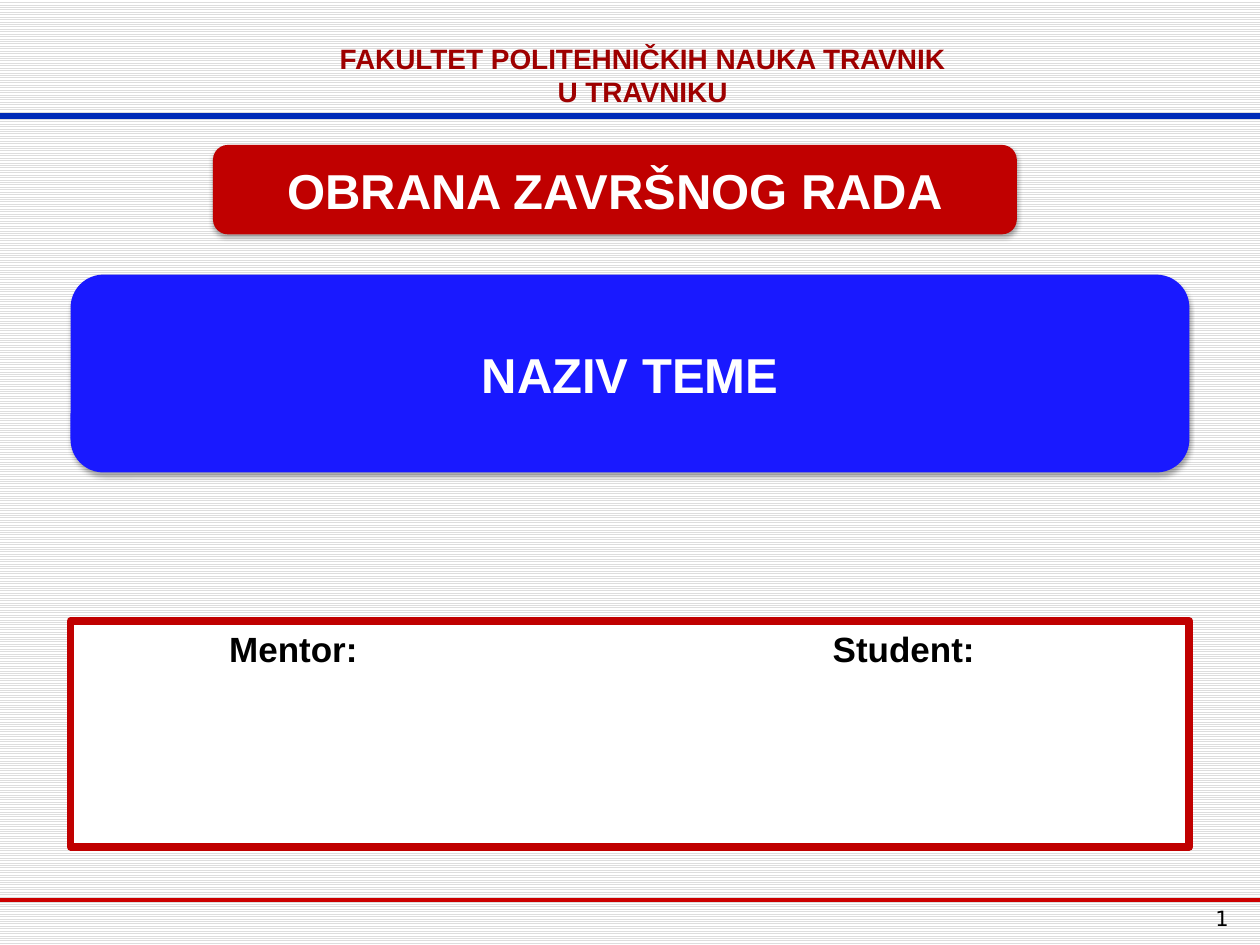
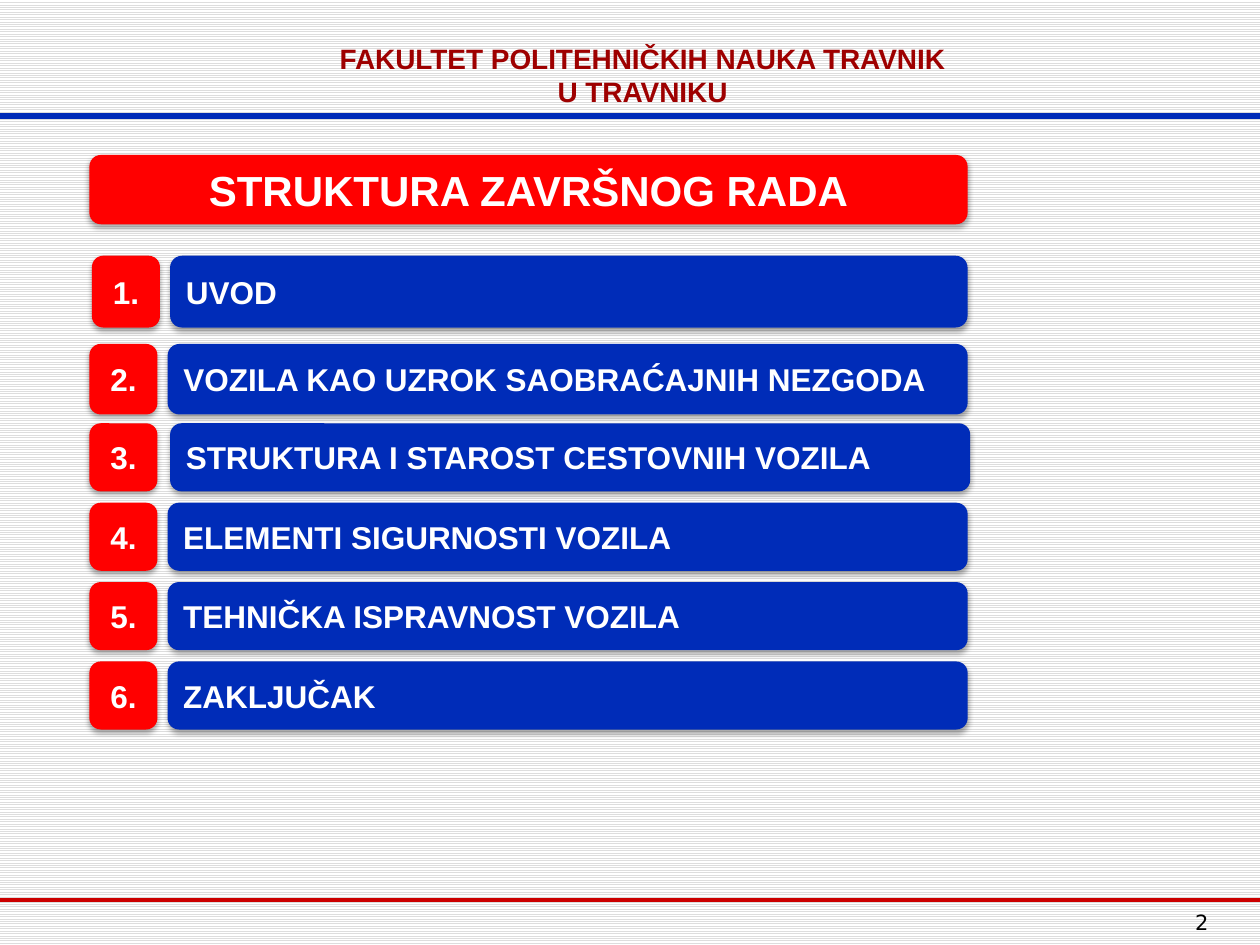
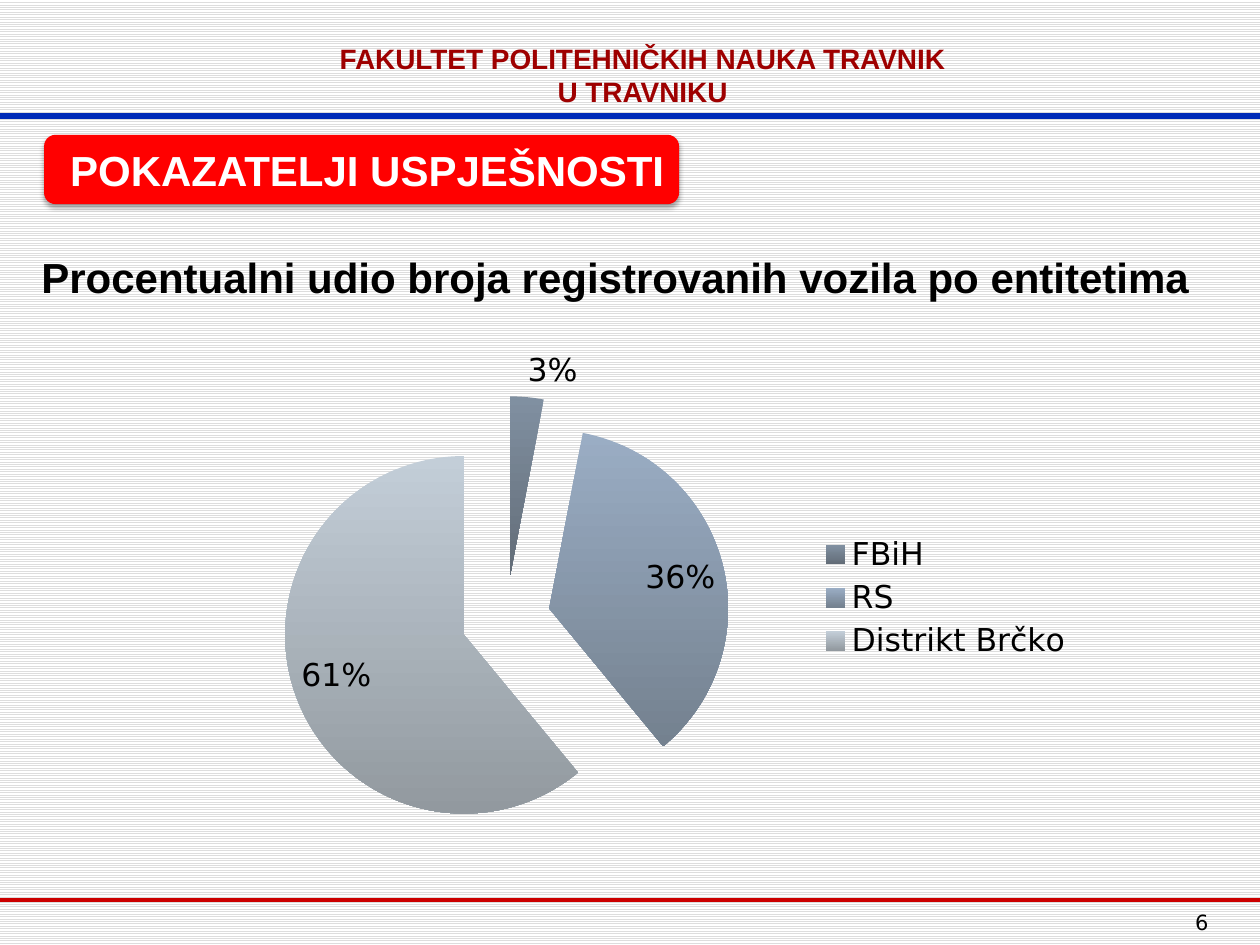
from lxml import etree
from pptx import Presentation
from pptx.chart.data import CategoryChartData
from pptx.dml.color import RGBColor
from pptx.enum.chart import XL_CHART_TYPE, XL_LABEL_POSITION, XL_LEGEND_POSITION
from pptx.enum.dml import MSO_PATTERN
from pptx.enum.shapes import MSO_CONNECTOR, MSO_SHAPE
from pptx.enum.text import MSO_ANCHOR, PP_ALIGN
from pptx.oxml.ns import qn
from pptx.util import Inches, Pt

PIE = XL_CHART_TYPE.PIE
BEST_FIT = XL_LABEL_POSITION.BEST_FIT
LEGEND_RIGHT = XL_LEGEND_POSITION.RIGHT
LIGHT_LINES = MSO_PATTERN.LIGHT_HORIZONTAL
STRAIGHT = MSO_CONNECTOR.STRAIGHT
PLATE = MSO_SHAPE.FLOWCHART_ALTERNATE_PROCESS
ROUNDED = MSO_SHAPE.ROUNDED_RECTANGLE
TOP, MIDDLE = MSO_ANCHOR.TOP, MSO_ANCHOR.MIDDLE
LEFT, CENTER, RIGHT = PP_ALIGN.LEFT, PP_ALIGN.CENTER, PP_ALIGN.RIGHT

FONT, NUMBER_FONT = "Arial", "DejaVu Sans"
BLACK, WHITE, STRIPE = "000000", "FFFFFF", "DDDDDD"
RED, DARK_RED, RULE_RED, HEADER_RED = "FF0000", "C00000", "CC0000", "9E0000"
BLUE, BRIGHT_BLUE = "002CB8", "1919FF"
FACULTY = ["FAKULTET POLITEHNIČKIH NAUKA TRAVNIK", "U TRAVNIKU"]


def color(value):
    return RGBColor.from_string(value)


def write(frame, text, size=18, ink=WHITE, font=FONT, bold=True, align=CENTER,
          anchor=MIDDLE, wrap=False, tabs=()):
    """Fill a text frame; text is a string or a list of paragraphs, tabs are in inches."""
    frame.word_wrap = wrap
    frame.vertical_anchor = anchor
    lines = [text] if isinstance(text, str) else text
    for index, line in enumerate(lines):
        paragraph = frame.add_paragraph() if index else frame.paragraphs[0]
        paragraph.alignment = align
        if tabs:
            stops = etree.SubElement(paragraph._p.get_or_add_pPr(), qn("a:tabLst"))
            for stop in tabs:
                etree.SubElement(stops, qn("a:tab"), pos=str(Inches(stop)), algn="l")
        run = paragraph.add_run()
        run.text = line
        run.font.name, run.font.size, run.font.bold = font, Pt(size), bold
        run.font.color.rgb = color(ink)


class Deck:
    def __init__(self):
        self.prs = Presentation()
        self.prs.slide_width, self.prs.slide_height = Inches(10), Inches(7.5)
        self.slide = None

    def new_slide(self, number, left=7.52, top=7.17):
        """Start a slide with the shared background, header, rules and page number."""
        self.slide = self.prs.slides.add_slide(self.prs.slide_layouts[6])
        fill = self.slide.background.fill
        fill.patterned()
        fill.pattern = LIGHT_LINES
        fill.fore_color.rgb, fill.back_color.rgb = color(STRIPE), color(WHITE)
        self.rule(7.14, RULE_RED, 2.25)
        self.rule(0.92, BLUE, 3)
        self.text(FACULTY, 2.54, 0.28, 5.12, 0.64, size=16, ink=HEADER_RED, align=CENTER)
        self.text(number, left, top, 2.17, 0.33, size=12, font=NUMBER_FONT,
                  bold=False, align=RIGHT)

    def rule(self, y, ink, width):
        line = self.slide.shapes.add_connector(
            STRAIGHT, Inches(0), Inches(y), Inches(10), Inches(y))
        line.line.color.rgb, line.line.width = color(ink), Pt(width)
        etree.SubElement(line._element.spPr, qn("a:effectLst"))

    def text(self, text, left, top, width, height, **style):
        box = self.slide.shapes.add_textbox(
            Inches(left), Inches(top), Inches(width), Inches(height))
        write(box.text_frame, text, **{"ink": BLACK, "anchor": TOP, "align": LEFT, **style})

    def shape(self, kind, left, top, width, height, fill):
        shape = self.slide.shapes.add_shape(
            kind, Inches(left), Inches(top), Inches(width), Inches(height))
        shape.shadow.inherit = False
        shape.fill.solid()
        shape.fill.fore_color.rgb = color(fill)
        shape.line.fill.background()
        return shape

    def plate(self, text, left, top, width, height, fill, inset=0.1, **style):
        """Add a rounded plate with a soft shadow below it."""
        plate = self.shape(PLATE, left, top, width, height, fill)
        effects = plate._element.spPr.find(qn("a:effectLst"))
        shadow = etree.SubElement(
            effects, qn("a:outerShdw"), blurRad=str(Pt(3.1)), dist=str(Pt(1.8)),
            dir="5400000", rotWithShape="0")
        ink = etree.SubElement(shadow, qn("a:srgbClr"), val=BLACK)
        etree.SubElement(ink, qn("a:alpha"), val="35000")
        plate.text_frame.margin_left = Inches(inset)
        write(plate.text_frame, text, **style)

    def frame(self, text, left, top, width, height, **style):
        """Add a white box with a thick red border."""
        box = self.shape(ROUNDED, left, top, width, height, WHITE)
        box.adjustments[0] = 0
        box.line.color.rgb, box.line.width = color(DARK_RED), Pt(4.5)
        write(box.text_frame, text, **{"ink": BLACK, "anchor": TOP, "align": LEFT, **style})

    def pie(self, shares, left, top, width, height, explosion):
        """Add an exploded pie; shares maps a category to (value, top colour, bottom colour)."""
        data = CategoryChartData()
        data.categories = list(shares)
        data.add_series("Series 1", [value for value, *_ in shares.values()])
        chart = self.slide.shapes.add_chart(
            PIE, Inches(left), Inches(top), Inches(width), Inches(height), data).chart
        chart.has_title = False
        chart.font.name, chart.font.size = NUMBER_FONT, Pt(18)
        chart.font.color.rgb = color(BLACK)
        chart.has_legend = True
        chart.legend.position = LEGEND_RIGHT
        chart.legend.include_in_layout = False
        plot = chart.plots[0]
        plot.vary_by_categories = True
        plot.has_data_labels = True
        labels = plot.data_labels
        labels.show_percentage, labels.show_value = True, False
        labels.number_format, labels.number_format_is_linked = "0%", False
        labels.position = BEST_FIT
        series = plot.series[0]
        for index, (_, *shades) in enumerate(shares.values()):
            fill = series.points[index].format.fill
            fill.gradient()
            fill.gradient_angle = 270
            for stop, shade in zip(fill.gradient_stops, shades):
                stop.color.rgb = color(shade)
        for point in series._element.findall(qn("c:dPt")):
            offset = etree.Element(qn("c:explosion"), val=str(explosion))
            point.find(qn("c:spPr")).addprevious(offset)


def title_slide(deck):
    deck.new_slide("1", left=7.68, top=7.14)
    deck.plate("OBRANA ZAVRŠNOG RADA", 1.69, 1.15, 6.38, 0.71, DARK_RED, size=28)
    deck.frame("\tMentor:\tStudent:", 0.56, 4.93, 8.88, 1.79, size=20, tabs=(1.16, 5.95))
    deck.plate("NAZIV TEME", 0.56, 2.18, 8.88, 1.57, BRIGHT_BLUE, size=28)


def structure_slide(deck):
    deck.new_slide("2")
    deck.plate("STRUKTURA ZAVRŠNOG RADA", 0.71, 1.23, 6.97, 0.55, RED, size=24)
    # chapter, left of its number, left and width of its label, height
    chapters = [
        ("UVOD", 0.73, 1.35, 6.33, 0.57),
        ("VOZILA KAO UZROK SAOBRAĆAJNIH NEZGODA", 0.71, 1.33, 6.35, 0.56),
        ("STRUKTURA I STAROST CESTOVNIH VOZILA", 0.71, 1.35, 6.35, 0.54),
        ("ELEMENTI SIGURNOSTI VOZILA", 0.71, 1.33, 6.35, 0.54),
        ("TEHNIČKA ISPRAVNOST VOZILA", 0.71, 1.33, 6.35, 0.54),
        ("ZAKLJUČAK", 0.71, 1.33, 6.35, 0.54),
    ]
    for index, (chapter, number_left, label_left, width, height) in enumerate(chapters):
        top = 2.1 + 0.63 * index if index else 2.03
        deck.plate(f"{index + 1}.", number_left, top, 0.54, height, RED)
        deck.plate(chapter, label_left, top, width, height, BLUE, align=LEFT, wrap=True)


def indicators_slide(deck):
    deck.new_slide("6")
    deck.plate("POKAZATELJI USPJEŠNOSTI", 0.35, 1.07, 5.04, 0.55, RED, inset=0.19, size=24)
    shares = {
        "FBiH": (3, "8090A1", "626C77"),
        "RS": (36, "9AADC4", "74818F"),
        "Distrikt Brčko": (61, "C3CED8", "92999F"),
    }
    deck.pie(shares, 1.56, 2.66, 7.06, 4.17, explosion=25)
    deck.text("Procentualni udio broja registrovanih vozila po entitetima",
              0.23, 1.95, 9.77, 0.5, size=24, wrap=True)


def main():
    deck = Deck()
    title_slide(deck)
    structure_slide(deck)
    indicators_slide(deck)
    deck.prs.save("out.pptx")


if __name__ == "__main__":
    main()
